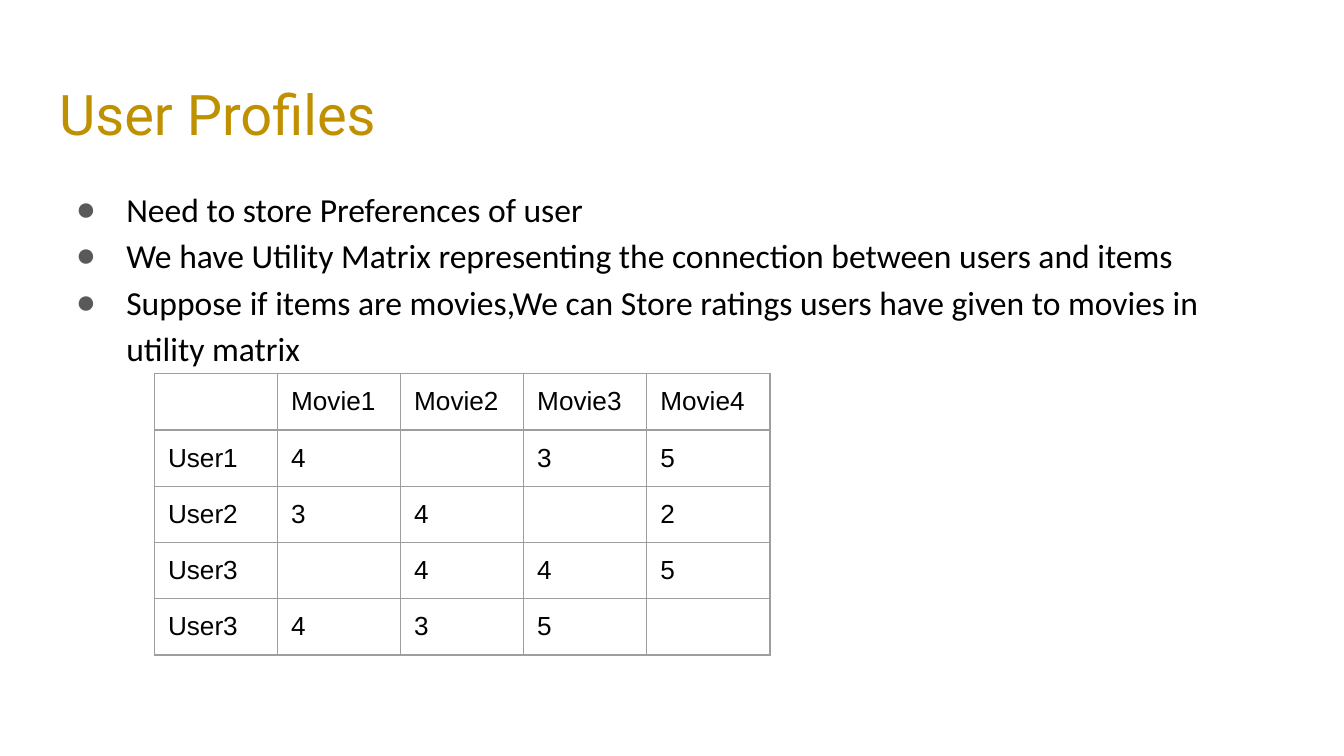
from dataclasses import dataclass

from lxml.etree import SubElement
from pptx import Presentation
from pptx.dml.color import RGBColor
from pptx.enum.text import MSO_ANCHOR, MSO_AUTO_SIZE, PP_ALIGN
from pptx.oxml.ns import qn
from pptx.util import Inches, Pt


@dataclass(frozen=True)
class Theme:
    gold: str = "BF9000"
    black: str = "000000"
    bullet: str = "595959"
    grid: str = "9E9E9E"
    title_size: int = 30
    body_size: int = 18
    cell_size: int = 14
    grid_width: float = 0.75


THEME = Theme()

POINTS = [
    "Need to store Preferences of user",
    "We have Utility Matrix representing the connection between users and items",
    "Suppose if items are movies,We can Store ratings users have given to movies in utility matrix",
]

RATINGS = [
    ["", "Movie1", "Movie2", "Movie3", "Movie4"],
    ["User1", "4", "", "3", "5"],
    ["User2", "3", "4", "", "2"],
    ["User3", "", "4", "4", "5"],
    ["User3", "4", "3", "5", ""],
]


def apply(target, formats):
    for attribute, value in formats.items():
        setattr(target, attribute, value)


def style_font(font, name, size, color):
    apply(font, {"name": name, "size": Pt(size), "bold": False})
    font.color.rgb = RGBColor.from_string(color)


def margins():
    return {f"margin_{side}": Inches(0.1) for side in ("left", "top", "right", "bottom")}


def place(placeholder, left, top, width, height):
    apply(placeholder, {
        "left": Inches(left), "top": Inches(top),
        "width": Inches(width), "height": Inches(height),
    })
    apply(placeholder.text_frame, {
        **margins(), "word_wrap": True,
        "auto_size": MSO_AUTO_SIZE.NONE, "vertical_anchor": MSO_ANCHOR.TOP,
    })


def write(paragraph, text, name, size, color):
    run = paragraph.add_run()
    run.text = text
    style_font(run.font, name, size, color)


def add_bullet(paragraph):
    properties = paragraph._p.get_or_add_pPr()
    properties.set("marL", str(Inches(0.5)))
    properties.set("indent", str(-Inches(3 / 8)))
    color = SubElement(properties, qn("a:buClr"))
    SubElement(color, qn("a:srgbClr"), val=THEME.bullet)
    SubElement(properties, qn("a:buFont"), typeface="Arial")
    SubElement(properties, qn("a:buChar"), char="●")


def fill_title(title):
    place(title, 0.34, 0.49, 9.32, 0.63)
    heading = title.text_frame.paragraphs[0]
    heading.alignment = PP_ALIGN.LEFT
    write(heading, "User Profiles", "Roboto", THEME.title_size, THEME.gold)


def fill_points(body):
    place(body, 0.34, 1.26, 9.32, 3.74)
    frame = body.text_frame
    for index, text in enumerate(POINTS):
        point = frame.add_paragraph() if index else frame.paragraphs[0]
        add_bullet(point)
        apply(point, {"line_spacing": 1.15, "space_before": Pt(0), "space_after": Pt(0)})
        write(point, text, "Calibri", THEME.body_size, THEME.black)


def draw_borders(cell):
    properties = cell._tc.get_or_add_tcPr()
    for position, side in enumerate(("lnL", "lnR", "lnT", "lnB")):
        border = properties.makeelement(qn(f"a:{side}"), {"w": str(Pt(THEME.grid_width))})
        fill = SubElement(border, qn("a:solidFill"))
        SubElement(fill, qn("a:srgbClr"), val=THEME.grid)
        properties.insert(position, border)


def fill_cell(cell, text):
    apply(cell, margins())
    cell.fill.background()
    draw_borders(cell)
    entry = cell.text_frame.paragraphs[0]
    if text:
        write(entry, text, "Arial", THEME.cell_size, THEME.black)
    else:
        blank = SubElement(entry._p, qn("a:endParaRPr"), sz=str(THEME.cell_size * 100))
        SubElement(blank, qn("a:latin"), typeface="Arial")


def add_utility_matrix(slide):
    rows, columns = len(RATINGS), len(RATINGS[0])
    matrix = slide.shapes.add_table(
        rows, columns, Inches(1.15), Inches(2.78), Inches(4.58), Inches(0.41 * rows)
    ).table
    apply(matrix, {"first_row": False, "horz_banding": False})
    for row, ratings in enumerate(RATINGS):
        for column, rating in enumerate(ratings):
            fill_cell(matrix.cell(row, column), rating)


def main():
    deck = Presentation()
    apply(deck, {"slide_width": Inches(10), "slide_height": Inches(10) * 9 // 16})
    slide = deck.slides.add_slide(deck.slide_layouts[1])
    fill_title(slide.shapes.title)
    fill_points(slide.placeholders[1])
    add_utility_matrix(slide)
    deck.save("out.pptx")


if __name__ == "__main__":
    main()
